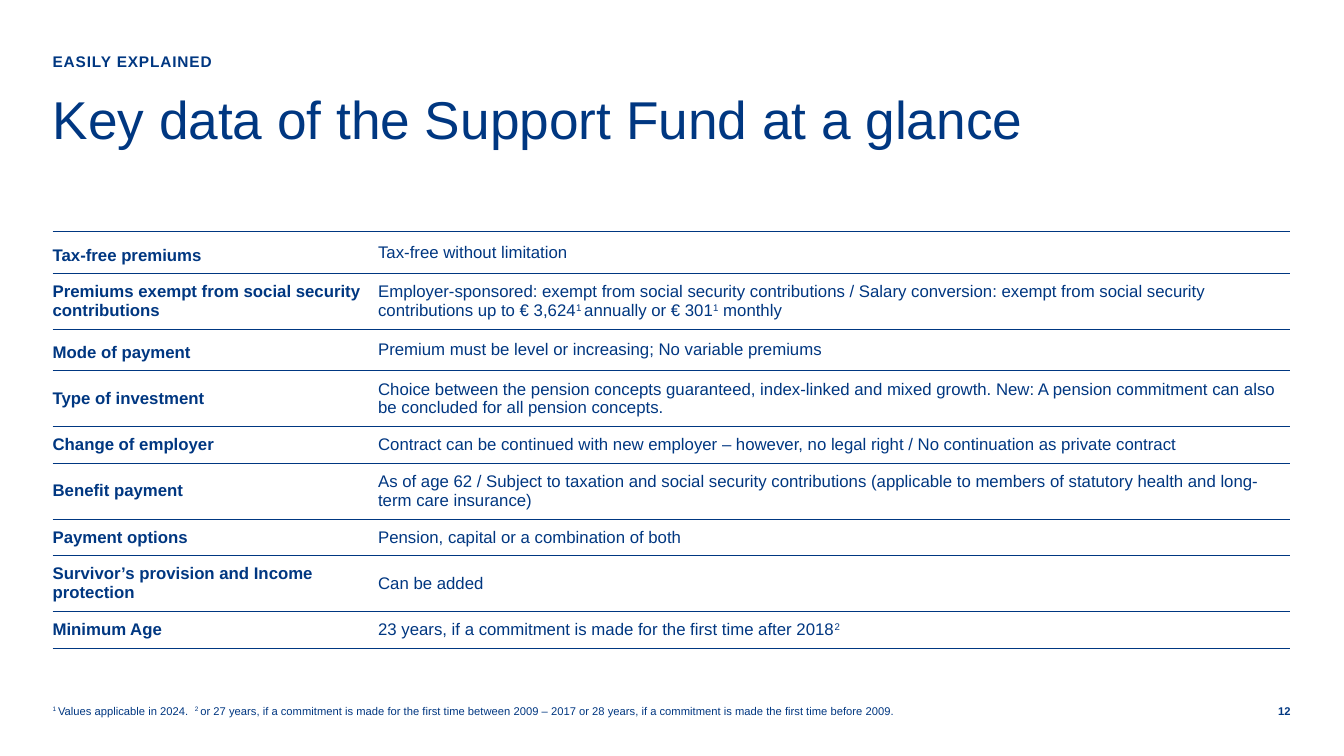
from lxml import etree
from pptx import Presentation
from pptx.dml.color import RGBColor
from pptx.enum import text as t
from pptx.oxml import ns
from pptx.util import Pt

NAVY = RGBColor(0x00, 0x37, 0x81)
FONT = "Arial"
LEFT = 37.6
TEXT_WIDTH = 734.4

KICKER = "EASILY EXPLAINED"
TITLE = "Key data of the Support Fund at a glance"
PAGE_NUMBER = "12"
FOOTNOTE = [
    ("1 ", True), ("Values applicable in 2024.  ", False), ("2 ", True),
    ("or 27 years, if a commitment is made for the first time between 2009 – 2017 "
     "or 28 years, if a commitment is made the first time before 2009.", False),
]

SINGLE, SPACED, DOUBLE = 24.9, 29.5, 38.2
ROWS = [
    (SPACED, "Tax-free premiums", [("Tax-free without limitation", False)]),
    (DOUBLE, "Premiums exempt from social security contributions", [
        ("Employer-sponsored: exempt from social security contributions / Salary conversion: "
         "exempt from social security contributions up to € 3,624", False),
        ("1 ", True), ("annually or € 301", False), ("1", True), (" monthly", False)]),
    (SPACED, "Mode of payment", [
        ("Premium must be level or increasing; No variable premiums", False)]),
    (DOUBLE, "Type of investment", [
        ("Choice between the pension concepts guaranteed, index-linked and mixed growth. "
         "New: A pension commitment can also be concluded for all pension concepts.", False)]),
    (SINGLE, "Change of employer", [
        ("Contract can be continued with new employer – however, no legal right / "
         "No continuation as private contract", False)]),
    (DOUBLE, "Benefit payment", [
        ("As of age 62 / Subject to taxation and social security contributions (applicable to "
         "members of statutory health and long-term care insurance)", False)]),
    (SINGLE, "Payment options", [("Pension, capital or a combination of both", False)]),
    (DOUBLE, "Survivor’s provision and Income protection", [("Can be added", False)]),
    (SINGLE, "Minimum Age", [
        ("23 years, if a commitment is made for the first time after 2018", False),
        ("2", True)]),
]
COLUMN_WIDTHS = (226.8, 657.4)
TABLE_TOP = 165.4
CELL_MARGIN = 5.7


def write_runs(paragraph, pieces, size, bold=False, spacing=None):
    for words, raised in pieces:
        run = paragraph.add_run()
        run.text = words
        run.font.name = FONT
        run.font.size = Pt(size)
        run.font.bold = bold
        run.font.color.rgb = NAVY
        properties = run.font._element
        if raised:
            properties.set("baseline", "30000")
        if spacing:
            properties.set("spc", str(spacing))
    if spacing is None:
        return
    paragraph.font.size = Pt(size)


def add_text(slide, box, pieces, size, bold=False, line_spacing=None, spacing=None,
             anchor=t.MSO_ANCHOR.TOP, align=t.PP_ALIGN.LEFT):
    frame = slide.shapes.add_textbox(*map(Pt, box)).text_frame
    frame.word_wrap = True
    frame.margin_left = frame.margin_right = frame.margin_top = frame.margin_bottom = 0
    frame.vertical_anchor = anchor
    paragraph = frame.paragraphs[0]
    paragraph.alignment = align
    paragraph.line_spacing = line_spacing
    write_runs(paragraph, pieces, size, bold, spacing)


def add_border(cell, side, width):
    line = etree.SubElement(cell._tc.get_or_add_tcPr(), ns.qn(f"a:ln{side}"), w=str(Pt(width)))
    if width:
        fill = etree.SubElement(line, ns.qn("a:solidFill"))
        etree.SubElement(fill, ns.qn("a:srgbClr"), val=str(NAVY))
    else:
        etree.SubElement(line, ns.qn("a:noFill"))


def add_key_data(slide):
    frame = slide.shapes.add_table(
        len(ROWS), len(COLUMN_WIDTHS), Pt(LEFT), Pt(TABLE_TOP),
        Pt(sum(COLUMN_WIDTHS)), Pt(sum(row[0] for row in ROWS)))
    table = frame.table
    table.first_row = table.horz_banding = False
    for column, width in zip(table.columns, COLUMN_WIDTHS):
        column.width = Pt(width)
    for row_index, (height, label, details) in enumerate(ROWS):
        table.rows[row_index].height = Pt(height)
        for column_index, pieces in enumerate(([(label, False)], details)):
            is_label = column_index == 0
            cell = table.cell(row_index, column_index)
            cell.margin_left = Pt(0 if is_label else CELL_MARGIN)
            cell.margin_right = cell.margin_top = cell.margin_bottom = Pt(CELL_MARGIN)
            cell.vertical_anchor = t.MSO_ANCHOR.MIDDLE
            paragraph = cell.text_frame.paragraphs[0]
            if is_label and height == SPACED:
                paragraph.line_spacing = Pt(18)
            write_runs(paragraph, pieces, 12, is_label)
            top_width = 1 if row_index == 0 else 0.5
            for side, width in (("L", 0), ("R", 0), ("T", top_width), ("B", 0.5)):
                add_border(cell, side, width)
            cell.fill.background()


def main():
    presentation = Presentation()
    presentation.slide_width, presentation.slide_height = Pt(960), Pt(540)
    slide = presentation.slides.add_slide(presentation.slide_layouts[6])
    add_text(slide, (LEFT, 69.1, TEXT_WIDTH, 73.4), [(TITLE, False)], 38, line_spacing=Pt(38))
    add_key_data(slide)
    add_text(slide, (LEFT, 37.4, TEXT_WIDTH, 20.2), [(KICKER, False)], 11, True, spacing=60)
    add_text(slide, (900.9, 501.8, 20.9, 11.5), [(PAGE_NUMBER, False)], 8, True, Pt(10),
             anchor=t.MSO_ANCHOR.MIDDLE, align=t.PP_ALIGN.RIGHT)
    add_text(slide, (LEFT, 485.3, TEXT_WIDTH, 27.4), FOOTNOTE, 8, line_spacing=0.9,
             anchor=t.MSO_ANCHOR.BOTTOM)
    presentation.save("out.pptx")


if __name__ == "__main__":
    main()
